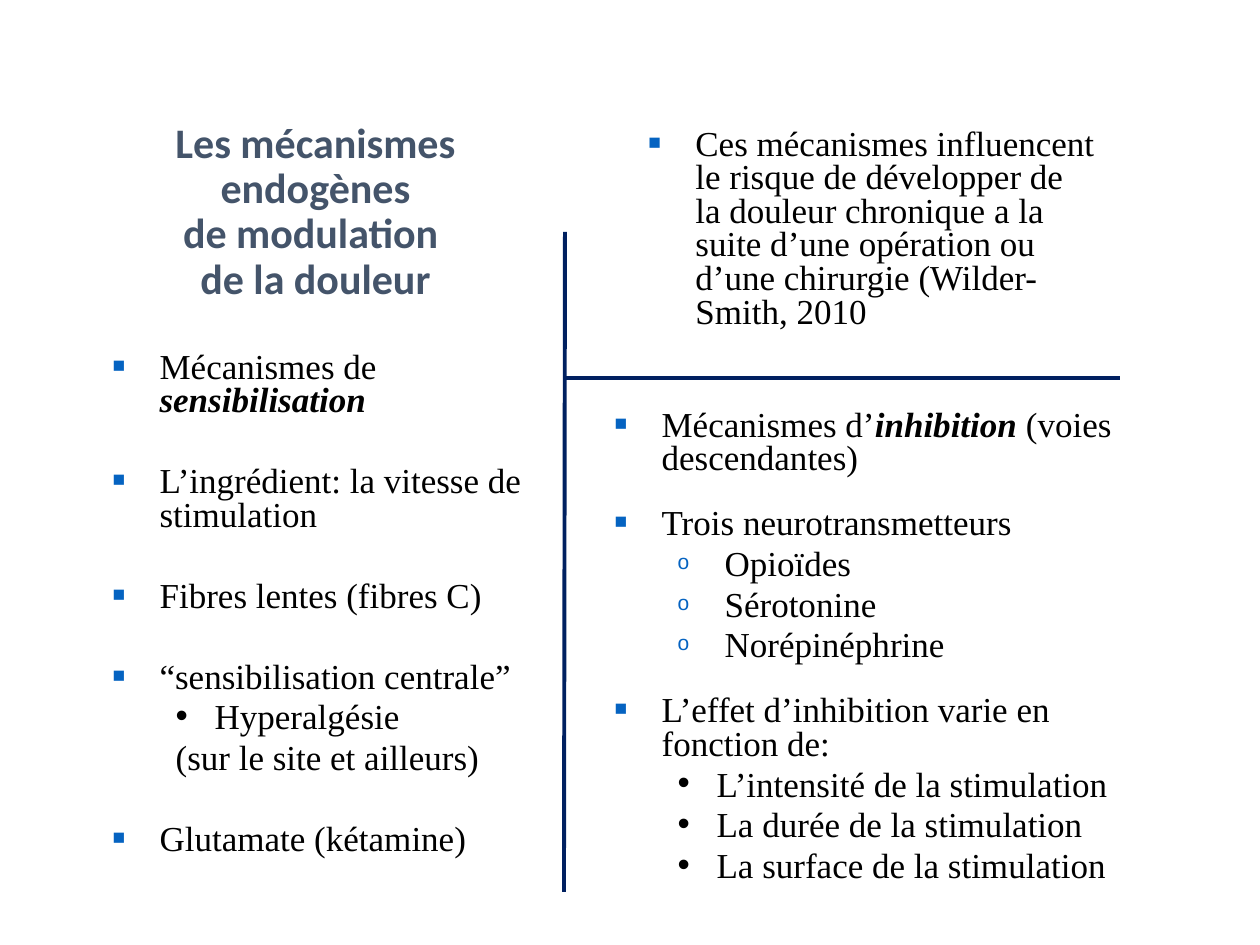
from lxml import etree
from pptx import Presentation
from pptx import util as u
from pptx.dml.color import RGBColor
from pptx.enum import shapes, text
from pptx.oxml.ns import qn

PX = 914400 / 126  # EMU in one px
SLATE = RGBColor(0x44, 0x54, 0x6A)
BLUE = RGBColor(0x05, 0x63, 0xC1)
NAVY = RGBColor(0x00, 0x20, 0x60)
BLACK = RGBColor(0, 0, 0)
SERIF = "Times New Roman"

# Kind of line: level, left margin and hang in px, mark, mark colour, mark size
KINDS = {
    "main": (0, 47, 47, "■", BLUE, 60),
    "ring": (1, 110, 47, "o", BLUE, 60),
    "dot": (1, 102, 39, "•", BLACK, 100),
    "plain": (1, 102, 39, None, None, None),
}


def place(shape, left, top, width, height):
    shape.left, shape.top = round(left * PX), round(top * PX)
    shape.width, shape.height = round(width * PX), round(height * PX)
    frame = shape.text_frame
    frame.word_wrap = True
    frame.auto_size = text.MSO_AUTO_SIZE.NONE
    return frame


def fill_list(frame, items, gap):
    """Write the lines; *stars* mark bold italics, gap precedes main lines."""
    frame.vertical_anchor = text.MSO_ANCHOR.TOP
    for i, (kind, words) in enumerate(items):
        para = frame.add_paragraph() if i else frame.paragraphs[0]
        level, left, hang, mark, color, size = KINDS[kind]
        para.level = level
        props = para._p.get_or_add_pPr()
        props.set("marL", str(round(left * PX)))
        props.set("indent", str(-round(hang * PX)))
        if mark:
            tint = etree.SubElement(props, qn("a:buClr"))
            etree.SubElement(tint, qn("a:srgbClr"), val=str(color))
            etree.SubElement(props, qn("a:buSzPct"), val=str(size * 1000))
            etree.SubElement(props, qn("a:buFont"), typeface="Arial")
            etree.SubElement(props, qn("a:buChar"), char=mark)
        else:
            etree.SubElement(props, qn("a:buNone"))
        para.line_spacing = 0.8
        para.space_before = u.Pt(0 if i == 0 else gap if kind == "main" else 4)
        for n, part in enumerate(words.split("*")):
            if not part:
                continue
            run = para.add_run()
            run.text = part
            font = run.font
            font.name, font.size = SERIF, u.Pt(20)
            font.color.rgb = BLACK
            font.bold = font.italic = n % 2 == 1


deck = Presentation()
deck.slide_width, deck.slide_height = u.Inches(10), u.Inches(7.5)
slide = deck.slides.add_slide(deck.slide_layouts[3])
title, left, right = slide.placeholders

# Title
frame = place(title, 102, 118, 427, 189)
frame.vertical_anchor = text.MSO_ANCHOR.MIDDLE
frame.text = "Les mécanismes endogènes\vde modulation \vde la douleur"
para = frame.paragraphs[0]
para.alignment = text.PP_ALIGN.CENTER
para.line_spacing = 0.9
for run in para.runs:
    run.font.name, run.font.size = "Calibri", u.Pt(24)
    run.font.bold = True
    run.font.color.rgb = SLATE

# Left list: sensitisation
fill_list(place(left, 100, 346, 456, 566), [
    ("main", "Mécanismes de *sensibilisation*"),
    ("main", "L’ingrédient: la vitesse de stimulation"),
    ("main", "Fibres lentes (fibres C)"),
    ("main", "“sensibilisation centrale”"),
    ("dot", "Hyperalgésie"),
    ("plain", "(sur le site et ailleurs)"),
    ("main", "Glutamate (kétamine)"),
], 27)

# Right list: inhibition
fill_list(place(right, 602, 404, 556, 507), [
    ("main", "Mécanismes d’*inhibition* (voies descendantes)"),
    ("main", "Trois neurotransmetteurs"),
    ("ring", "Opioïdes"),
    ("ring", "Sérotonine"),
    ("ring", "Norépinéphrine"),
    ("main", "L’effet d’inhibition varie en fonction de:"),
    ("dot", "L’intensité de la stimulation"),
    ("dot", "La durée de la stimulation"),
    ("dot", "La surface de la stimulation"),
], 18)

# Dividing lines
for ends in [(565, 232, 564, 892), (1120, 378, 564, 378)]:
    line = slide.shapes.add_connector(
        shapes.MSO_CONNECTOR.STRAIGHT, *(round(v * PX) for v in ends))
    line.line.color.rgb = NAVY
    line.line.width = u.Pt(2.25)
    etree.SubElement(line._element.spPr, qn("a:effectLst"))

# Remark at top right
note = slide.shapes.add_textbox(0, 0, 0, 0)
fill_list(place(note, 636, 123, 471, 213), [
    ("main", "Ces mécanismes influencent le risque de développer de la douleur "
             "chronique a la suite d’une opération ou d’une chirurgie "
             "(Wilder-Smith, 2010"),
], 0)

deck.save("out.pptx")
